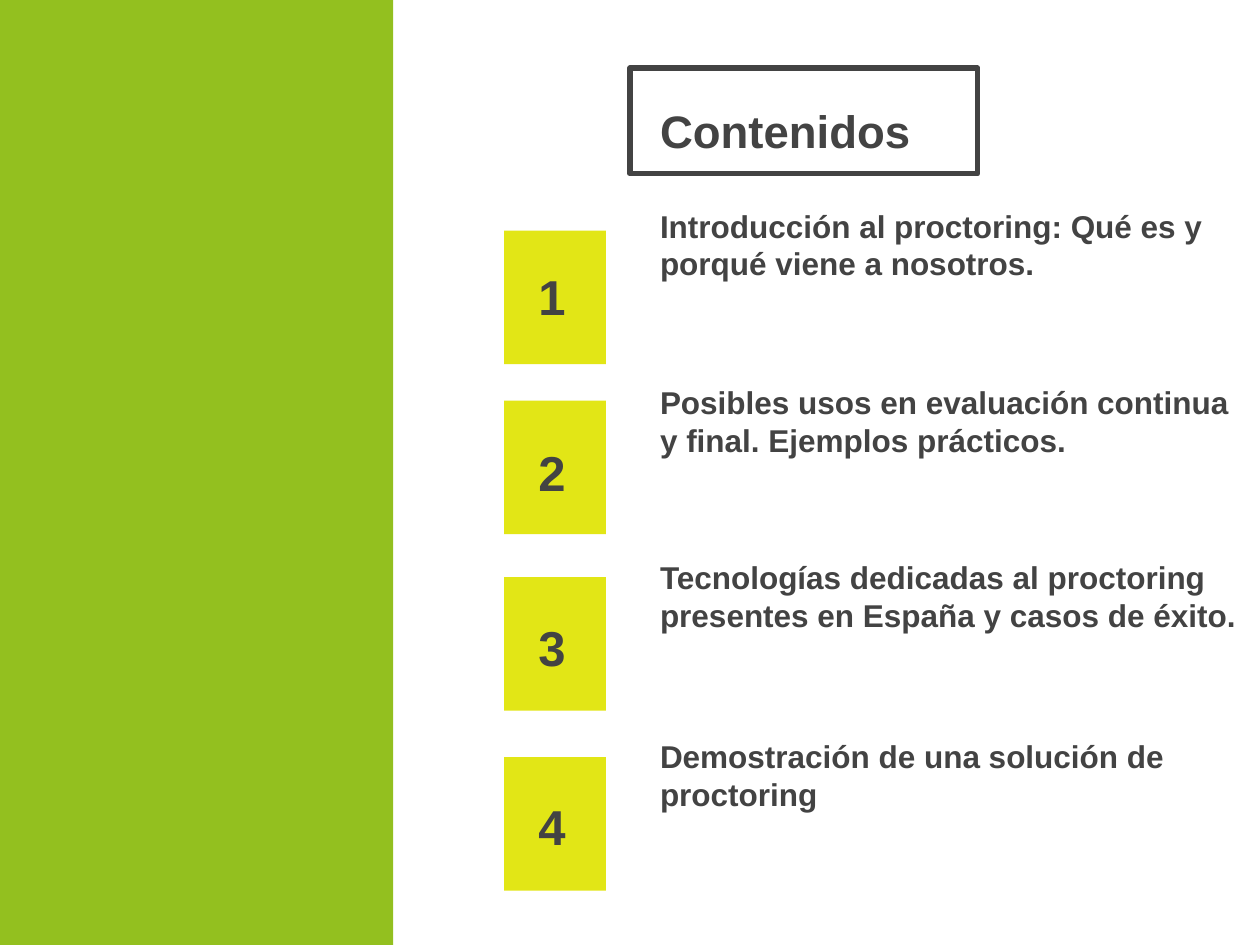
from pptx import Presentation
from pptx.dml.color import RGBColor
from pptx.enum.shapes import MSO_SHAPE
from pptx.enum.text import MSO_ANCHOR, PP_ALIGN
from pptx.util import Inches, Pt

RECTANGLE = MSO_SHAPE.RECTANGLE
MIDDLE, BOTTOM = MSO_ANCHOR.MIDDLE, MSO_ANCHOR.BOTTOM
LEFT, CENTER = PP_ALIGN.LEFT, PP_ALIGN.CENTER

GREEN, YELLOW, GRAY = "93C01F", "E2E616", "434343"
TEXT_LEFT = 5.14
NUMBER_DROP = 0.54  # from the top of a topic's text to the top of its number

# Top of the tile, top of the text, wording
TOPICS = [
    (1.83, 1.34, "Introducción al proctoring: Qué es y porqué viene a nosotros."),
    (3.18, 2.74, "Posibles usos en evaluación continua y final. Ejemplos prácticos."),
    (4.58, 4.13, "Tecnologías dedicadas al proctoring presentes en España y casos de éxito."),
    (6.01, 5.55, "Demostración de una solución de proctoring"),
]


def color(hex_value):
    return RGBColor.from_string(hex_value)


def add_rectangle(slide, left, top, width, height, fill=None, outline=None):
    rectangle = slide.shapes.add_shape(
        RECTANGLE, Inches(left), Inches(top), Inches(width), Inches(height))
    rectangle.shadow.inherit = False
    if fill:
        rectangle.fill.solid()
        rectangle.fill.fore_color.rgb = color(fill)
    else:
        rectangle.fill.background()
    if outline:
        rectangle.line.color.rgb = color(outline)
        rectangle.line.width = Pt(3)
    else:
        rectangle.line.fill.background()


def add_text(slide, left, top, width, height, wording, size,
             anchor=MIDDLE, align=LEFT, line_spacing=None):
    frame = slide.shapes.add_textbox(
        Inches(left), Inches(top), Inches(width), Inches(height)).text_frame
    frame.word_wrap = True
    frame.vertical_anchor = anchor
    frame.margin_left = frame.margin_right = Inches(0.1)
    frame.margin_top = frame.margin_bottom = Inches(0.1)
    paragraph = frame.paragraphs[0]
    paragraph.text = wording
    paragraph.alignment = align
    paragraph.line_spacing = line_spacing
    paragraph.font.name = "Arial"
    paragraph.font.size = Pt(size)
    paragraph.font.bold = True
    paragraph.font.color.rgb = color(GRAY)


def add_topic(slide, number, tile_top, text_top, wording):
    add_rectangle(slide, 4, tile_top, 0.81, 1.06, fill=YELLOW)
    add_text(slide, 3.69, text_top + NUMBER_DROP, 1.38, 0.93, str(number), 28,
             align=CENTER)
    add_text(slide, TEXT_LEFT, text_top, 4.86, 1, wording, 18, anchor=BOTTOM)


def main():
    presentation = Presentation()
    presentation.slide_width = Inches(10)
    presentation.slide_height = Inches(7.5)
    slide = presentation.slides.add_slide(presentation.slide_layouts[6])

    add_rectangle(slide, 5, 0.54, 2.76, 0.84, outline=GRAY)
    add_rectangle(slide, 0, 0, 3.12, 7.5, fill=GREEN)
    add_text(slide, TEXT_LEFT, 0.19, 5.81, 1.62, "Contenidos", 26,
             line_spacing=1.15)
    for number, topic in enumerate(TOPICS, start=1):
        add_topic(slide, number, *topic)

    presentation.save("out.pptx")


if __name__ == "__main__":
    main()
